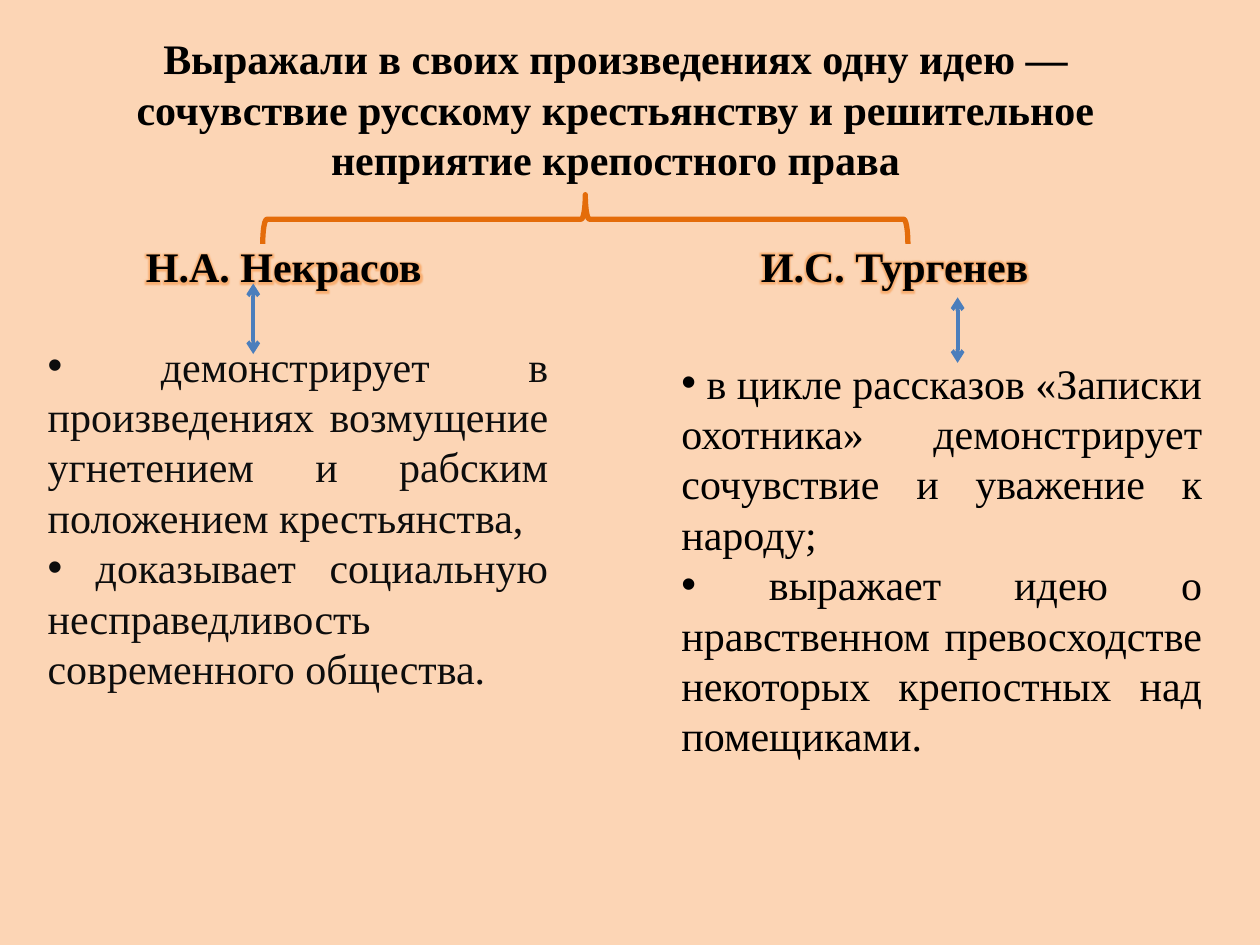
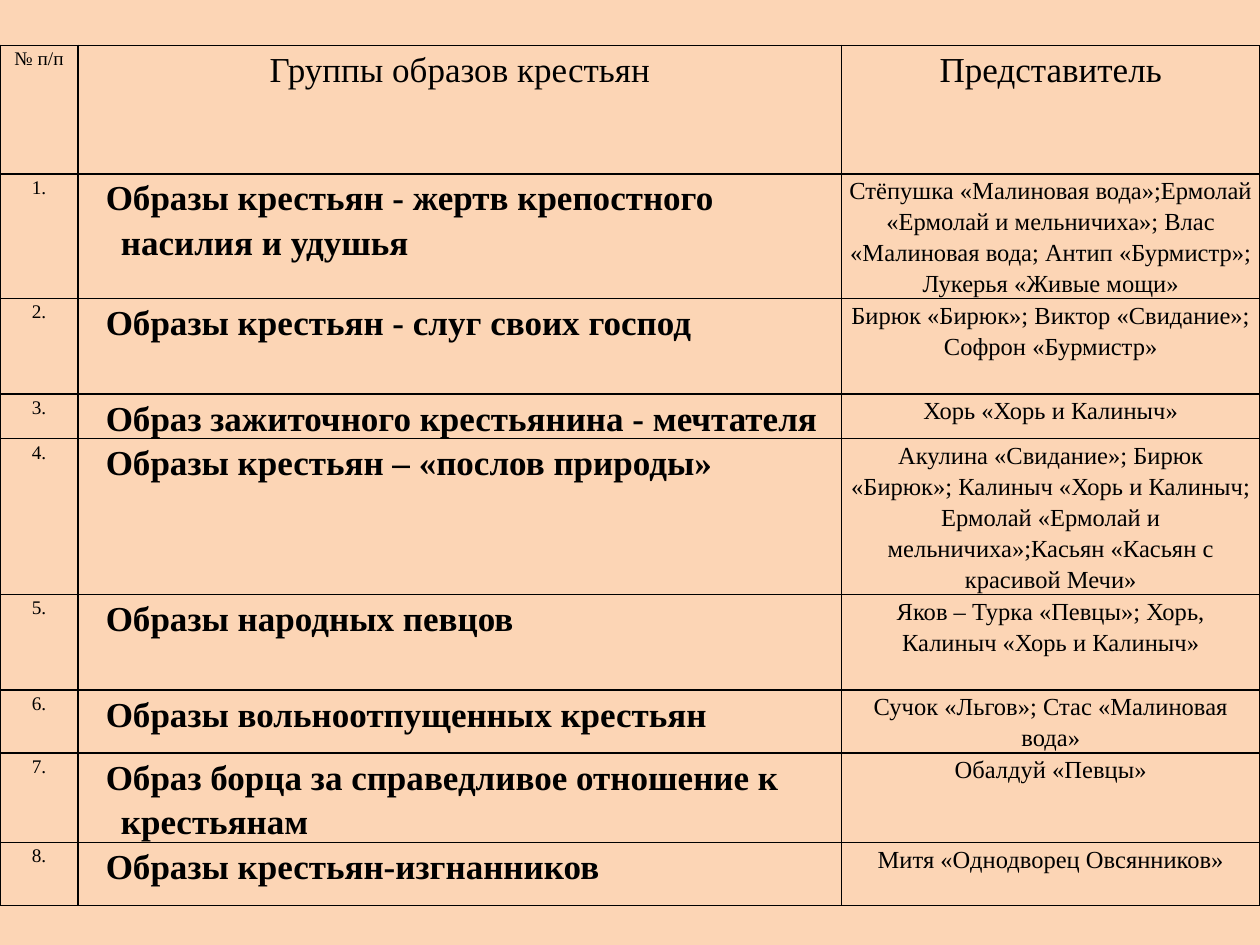
from lxml.etree import SubElement
from pptx import Presentation
from pptx.dml.color import RGBColor
from pptx.enum.shapes import MSO_CONNECTOR, MSO_SHAPE
from pptx.enum.text import MSO_ANCHOR as Anchor, MSO_AUTO_SIZE as AutoSize, PP_ALIGN as Align
from pptx.oxml.ns import qn
from pptx.util import Inches, Pt

PEACH = RGBColor(0xFC, 0xD5, 0xB5)
ORANGE = RGBColor(0xE4, 0x6C, 0x0A)
BLUE = RGBColor(0x4B, 0x7E, 0xBC)
BLACK = RGBColor(0, 0, 0)
SOFT_BLACK = RGBColor(0x0D, 0x0D, 0x0D)
FONT = "Times New Roman"
COLUMNS, ROWS = 100, 75

THESIS = ("Выражали в своих произведениях одну идею — сочувствие русскому "
          "крестьянству и решительное неприятие крепостного права")
NEKRASOV_POINTS = [
    " демонстрирует в произведениях возмущение угнетением и рабским "
    "положением крестьянства,",
    " доказывает социальную несправедливость современного общества.",
]
TURGENEV_POINTS = [
    " в цикле рассказов «Записки охотника» демонстрирует сочувствие и "
    "уважение к народу;",
    " выражает идею о нравственном превосходстве некоторых крепостных "
    "над помещиками.",
]
HEADINGS = ["№ п/п", "Группы образов крестьян", "Представитель"]
# Row height, group of peasant characters, who represents it
GROUPS = [
    (8.7, "Образы крестьян - жертв крепостного насилия и удушья",
     "Стёпушка «Малиновая вода»;Ермолай «Ермолай и мельничиха»; Влас "
     "«Малиновая вода; Антип «Бурмистр»; Лукерья «Живые мощи»"),
    (7.6, "Образы крестьян - слуг своих господ",
     "Бирюк «Бирюк»; Виктор «Свидание»; Софрон «Бурмистр»"),
    (3.1, "Образ зажиточного крестьянина - мечтателя",
     "Хорь «Хорь и Калиныч»"),
    (10.1, "Образы крестьян – «послов природы»",
     "Акулина «Свидание»; Бирюк «Бирюк»; Калиныч «Хорь и Калиныч; Ермолай "
     "«Ермолай и мельничиха»;Касьян «Касьян с красивой Мечи»"),
    (7.6, "Образы народных певцов",
     "Яков – Турка «Певцы»; Хорь, Калиныч «Хорь и Калиныч»"),
    (5, "Образы вольноотпущенных крестьян",
     "Сучок «Льгов»; Стас «Малиновая вода»"),
    (5, "Образ борца за справедливое отношение к крестьянам",
     "Обалдуй «Певцы»"),
    (5, "Образы крестьян-изгнанников", "Митя «Однодворец Овсянников»"),
]


class Deck:
    """Draws on the current slide, measured in grid columns and rows."""

    def __init__(self):
        self.presentation = Presentation()
        self.presentation.slide_width = Inches(10)
        self.presentation.slide_height = Inches(7.5)
        self.column = self.presentation.slide_width / COLUMNS
        self.row = self.presentation.slide_height / ROWS

    def new_slide(self):
        self.slide = self.presentation.slides.add_slide(self.presentation.slide_layouts[6])
        fill = self.slide.background.fill
        fill.solid()
        fill.fore_color.rgb = PEACH

    def place(self, left, top, width, height):
        return (round(left * self.column), round(top * self.row),
                round(width * self.column), round(height * self.row))

    def style(self, paragraph, size=24, bold=False, color=BLACK, align=Align.LEFT):
        paragraph.alignment = align
        font = paragraph.font
        font.name, font.size, font.bold = FONT, Pt(size), bold
        font.color.rgb = color

    def text(self, box, lines, bullets=False, anchor=Anchor.TOP, **style):
        frame = self.slide.shapes.add_textbox(*self.place(*box)).text_frame
        frame.word_wrap = True
        frame.auto_size = AutoSize.SHAPE_TO_FIT_TEXT
        frame.vertical_anchor = anchor
        for number, line in enumerate(lines):
            paragraph = frame.add_paragraph() if number else frame.paragraphs[0]
            paragraph.add_run().text = line
            if bullets:
                properties = paragraph._p.get_or_add_pPr()
                SubElement(properties, qn("a:buFont"), typeface="Arial")
                SubElement(properties, qn("a:buChar"), char="•")
            self.style(paragraph, **style)
        return frame

    def writer(self, box, name):
        """Write a bold name with an orange glow."""
        run = self.text(box, [name], bold=True).paragraphs[0].runs[0]
        effects = SubElement(run._r.get_or_add_rPr(), qn("a:effectLst"))
        glow = SubElement(effects, qn("a:glow"), rad=str(Pt(5)))
        color = SubElement(glow, qn("a:srgbClr"), val="F79646")
        SubElement(color, qn("a:alpha"), val="60000")

    def brace(self, box):
        brace = self.slide.shapes.add_shape(MSO_SHAPE.LEFT_BRACE, *self.place(*box))
        brace.rotation = 90
        brace.shadow.inherit = False
        brace.fill.background()
        brace.line.color.rgb = ORANGE
        brace.line.width = Pt(3)

    def double_arrow(self, x, top, bottom):
        x, top, _, bottom = self.place(x, top, 0, bottom)
        arrow = self.slide.shapes.add_connector(MSO_CONNECTOR.STRAIGHT, x, top, x, bottom)
        arrow.line.color.rgb = BLUE
        arrow.line.width = Pt(2.25)
        for end in ("a:headEnd", "a:tailEnd"):
            SubElement(arrow.line._get_or_add_ln(), qn(end), type="arrow")
        SubElement(arrow._element.spPr, qn("a:effectLst"))

    def table(self, left, top, widths, heights):
        box = self.place(left, top, sum(widths), sum(heights))
        table = self.slide.shapes.add_table(len(heights), len(widths), *box).table
        table.first_row = table.horz_banding = False
        for column, width in zip(table.columns, widths):
            column.width = round(width * self.column)
        for row, height in zip(table.rows, heights):
            row.height = round(height * self.row)
        return table

    def cell(self, cell, text, hanging=False, **style):
        cell.margin_left = cell.margin_right = Inches(0.06)
        cell.margin_top = cell.margin_bottom = 0
        paragraph = cell.text_frame.paragraphs[0]
        paragraph.add_run().text = text
        paragraph.line_spacing = 1.15
        self.style(paragraph, **style)
        if hanging:
            properties = paragraph._p.get_or_add_pPr()
            properties.set("marL", str(Inches(0.28)))
            properties.set("indent", str(Inches(-0.12)))
        properties = cell._tc.get_or_add_tcPr()
        for side in ("a:lnL", "a:lnR", "a:lnT", "a:lnB"):
            border = SubElement(properties, qn(side), w=str(Pt(1)))
            fill = SubElement(border, qn("a:solidFill"))
            SubElement(fill, qn("a:srgbClr"), val=str(BLACK))
        cell.fill.background()


def draw_shared_idea(deck):
    deck.new_slide()
    deck.writer((10.6, 18.6, 26, 5), "Н.А. Некрасов")
    deck.writer((59.4, 18.6, 33.1, 5), "И.С. Тургенев")
    deck.text((8.3, 2.1, 81.1, 13.1), [THESIS], bold=True, align=Align.CENTER)
    deck.brace((44.5, -8.2, 3.9, 51.2))
    deck.text((2.8, 26.5, 41.7, 29.3), NEKRASOV_POINTS, bullets=True,
              color=SOFT_BLACK, align=Align.JUSTIFY)
    deck.text((53.1, 27.7, 43.3, 33.3), TURGENEV_POINTS, bullets=True,
              anchor=Anchor.MIDDLE, align=Align.JUSTIFY)
    deck.double_arrow(20.1, 22.5, 28.1)
    deck.double_arrow(76, 23.6, 28.8)


def draw_peasant_groups(deck):
    deck.new_slide()
    heights = [10.2] + [height for height, _, _ in GROUPS]
    table = deck.table(0, 3.6, (6.2, 60.6, 33.2), heights)
    for column, (heading, size) in enumerate(zip(HEADINGS, (11, 20, 20))):
        deck.cell(table.cell(0, column), heading, size=size, align=Align.CENTER)
    for number, (_, group, people) in enumerate(GROUPS, 1):
        deck.cell(table.cell(number, 0), f"{number}.", size=11, align=Align.CENTER)
        deck.cell(table.cell(number, 1), group, hanging=True, size=20, bold=True)
        deck.cell(table.cell(number, 2), people, size=14, align=Align.CENTER)


def main():
    deck = Deck()
    draw_shared_idea(deck)
    draw_peasant_groups(deck)
    deck.presentation.save("out.pptx")


if __name__ == "__main__":
    main()
